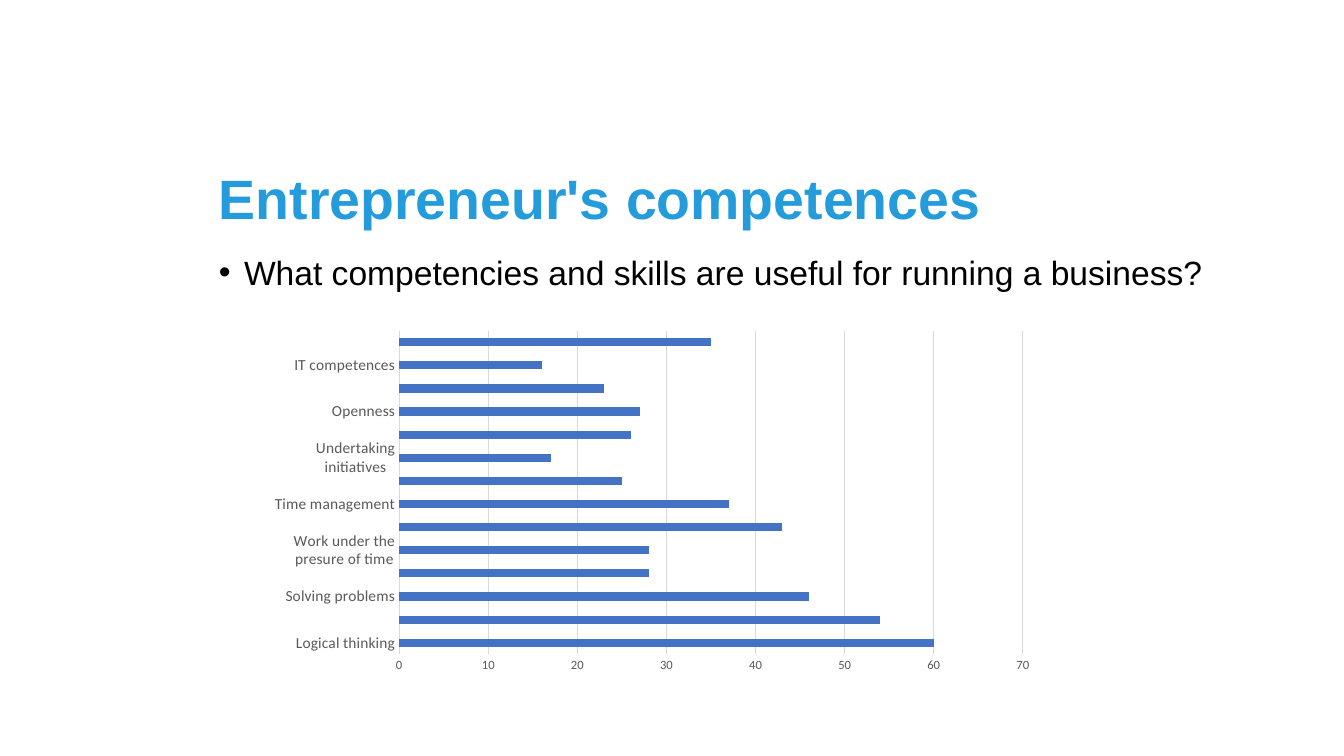
from lxml import etree
from pptx import Presentation
from pptx.chart.data import CategoryChartData
from pptx.dml.color import RGBColor
from pptx.enum import chart as ch, text
from pptx.oxml import parse_xml
from pptx.oxml.ns import nsdecls, qn
from pptx.util import Inches, Pt

WIDE, HIGH = Inches(13.33), Inches(7.5)
SKY = RGBColor(0x24, 0x9C, 0xDC)
BLACK = RGBColor(0, 0, 0)
BLUE = RGBColor(0x44, 0x72, 0xC4)
GRAY = RGBColor(0x59, 0x59, 0x59)
PALE = RGBColor(0xD9, 0xD9, 0xD9)

SKILLS = {
    "Logical thinking": 60,
    "Creativity": 54,
    "Solving problems": 46,
    "Work in the group": 28,
    "Work under the presure of time": 28,
    "Communication skills": 43,
    "Time management": 37,
    "Leadership skills": 25,
    "Undertaking initiatives": 17,
    "Negotiations": 26,
    "Openness": 27,
    "Assertiveness": 23,
    "IT competences": 16,
    "Building good relationships with partners and customers": 35,
}


def area(left, top, width, height):
    """Turn percentages of the slide's size into lengths."""
    return (int(WIDE * left / 100), int(HIGH * top / 100),
            int(WIDE * width / 100), int(HIGH * height / 100))


def style(font, name, size, color, bold=False):
    font.name, font.size, font.bold = name, Pt(size), bold
    font.color.rgb = color


def fill_holder(holder, box, words, anchor):
    """Place a placeholder, write its text and return the paragraph."""
    holder.left, holder.top, holder.width, holder.height = box
    frame = holder.text_frame
    frame.text = words
    frame.word_wrap = True
    frame.auto_size = text.MSO_AUTO_SIZE.NONE
    frame.vertical_anchor = anchor
    para = frame.paragraphs[0]
    para.alignment = text.PP_ALIGN.LEFT
    para.line_spacing = 0.9
    para.space_before = Pt(0)
    return para


def add_bullet(para, indent):
    props = para._p.get_or_add_pPr()
    props.set("marL", str(indent))
    props.set("indent", str(-indent))
    etree.SubElement(props, qn("a:buFont")).set("typeface", "Arial")
    etree.SubElement(props, qn("a:buChar")).set("char", "•")


def style_axis(axis, size):
    axis.major_tick_mark = axis.minor_tick_mark = ch.XL_TICK_MARK.NONE
    style(axis.tick_labels.font, "Calibri", size, GRAY)


def set_plot(chart, **shares):
    """Fix the inner plot area as shares of the chart's size."""
    parts = "".join(f'<c:{key}Mode val="edge"/>' for key in "xy")
    parts += "".join(f'<c:{key} val="{val}"/>' for key, val in shares.items())
    layout = parse_xml(
        f'<c:layout {nsdecls("c")}><c:manualLayout>'
        f'<c:layoutTarget val="inner"/>{parts}</c:manualLayout></c:layout>')
    plot = chart._chartSpace.chart.plotArea
    for old in plot.findall(qn("c:layout")):
        plot.remove(old)
    plot.insert(0, layout)


def add_bars(slide, box):
    data = CategoryChartData()
    data.categories = list(SKILLS)
    data.add_series("Series 1", list(SKILLS.values()))
    chart = slide.shapes.add_chart(
        ch.XL_CHART_TYPE.BAR_CLUSTERED, *box, data).chart
    chart.has_legend = chart.has_title = False
    style(chart.font, "Calibri", 10, BLACK)

    plot = chart.plots[0]
    plot.gap_width = 182
    plot.vary_by_categories = False
    bars = plot.series[0].format.fill
    bars.solid()
    bars.fore_color.rgb = BLUE

    cats, vals = chart.category_axis, chart.value_axis
    style_axis(cats, 11)
    style_axis(vals, 9)
    vals.minimum_scale, vals.maximum_scale, vals.major_unit = 0, 70, 10
    vals.format.line.fill.background()
    for line in (cats.format.line, vals.major_gridlines.format.line):
        line.color.rgb = PALE
        line.width = Pt(0.75)
    set_plot(chart, x=0.18, y=0.02, w=0.79, h=0.91)


def main():
    deck = Presentation()
    deck.slide_width, deck.slide_height = WIDE, HIGH
    slide = deck.slides.add_slide(deck.slide_layouts[1])
    title, body = slide.placeholders

    head = fill_holder(title, area(15.53, 19.87, 64.52, 13.47),
                       "Entrepreneur's competences",
                       text.MSO_ANCHOR.MIDDLE)
    style(head.font, "Arial", 39.6, SKY, bold=True)

    ask = fill_holder(
        body, area(15.53, 33.2, 76.37, 62.13),
        "What competencies and skills are useful for running a business?",
        text.MSO_ANCHOR.TOP)
    add_bullet(ask, Inches(0.25))
    style(ask.font, "Arial", 24, BLACK)

    add_bars(slide, area(19.13, 42.8, 58.74, 47.07))
    deck.save("out.pptx")


if __name__ == "__main__":
    main()
